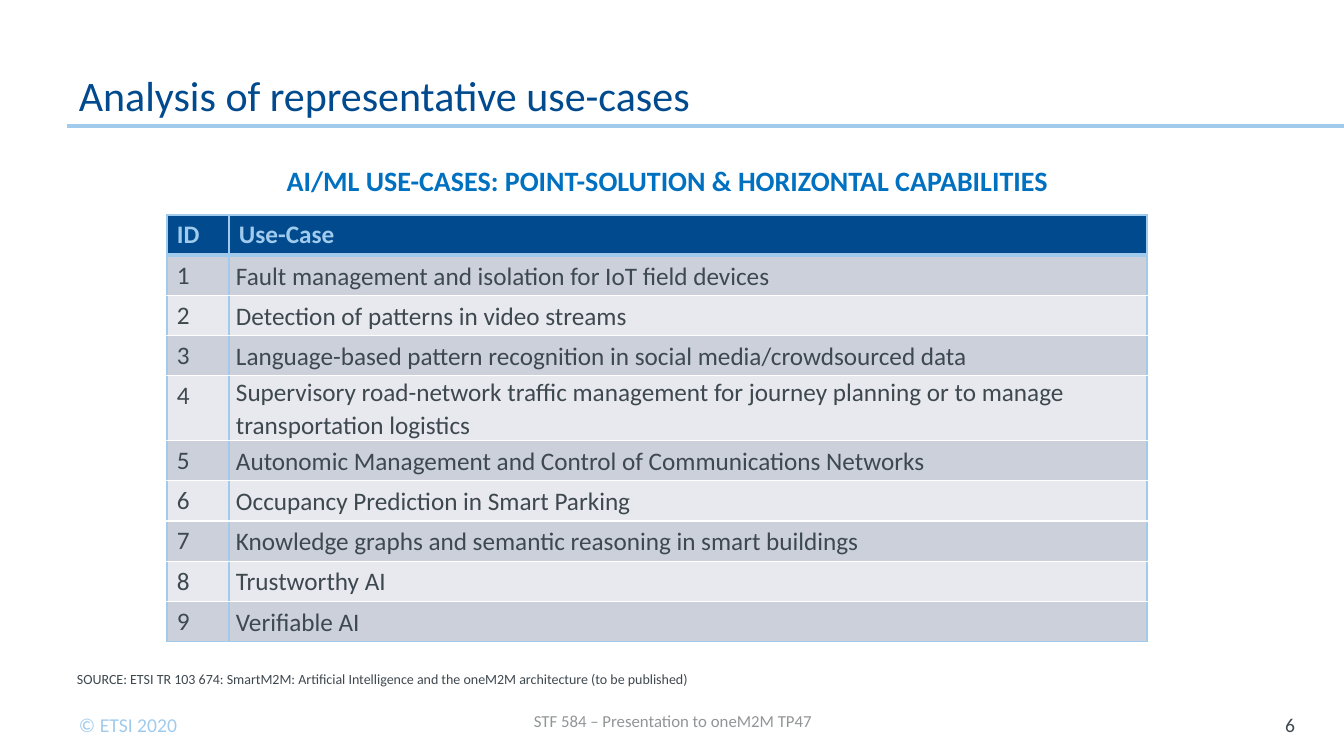
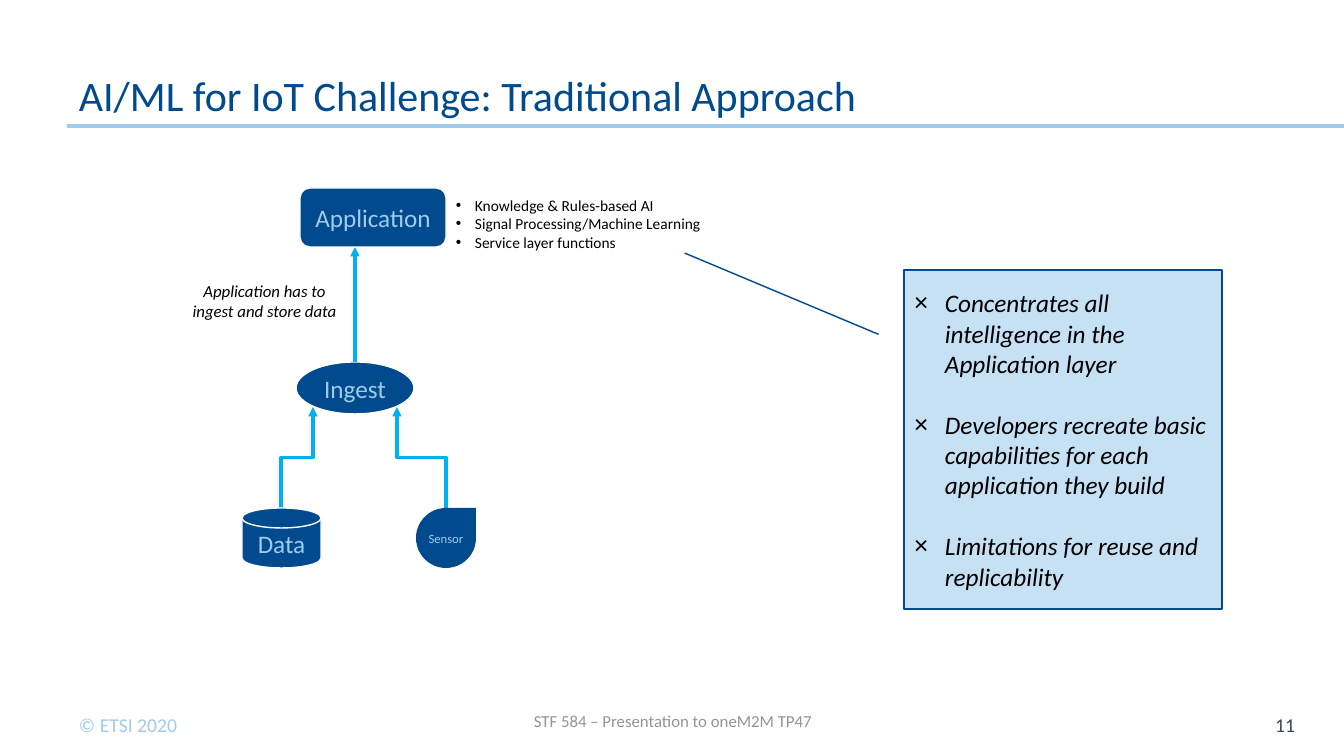
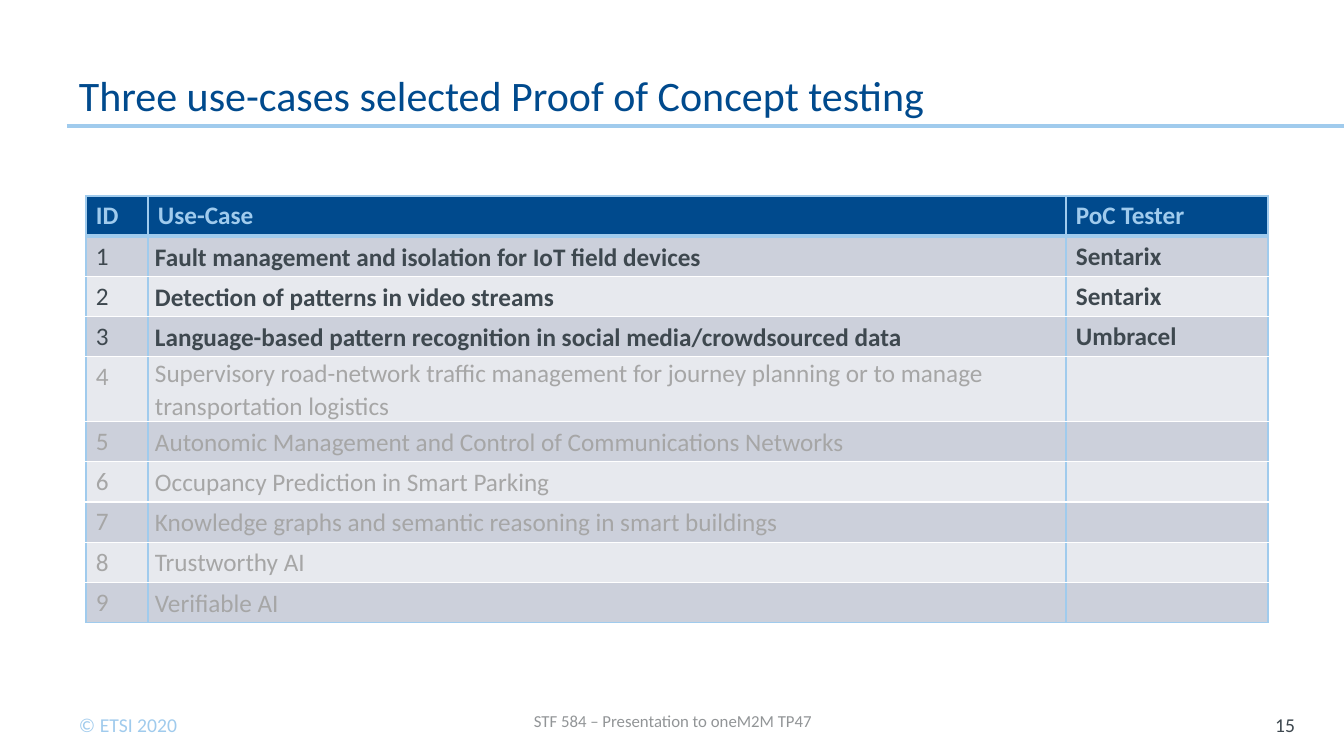
from lxml import etree
from pptx import Presentation
from pptx.dml.color import RGBColor
from pptx.enum.shapes import MSO_CONNECTOR, MSO_SHAPE
from pptx.enum.text import MSO_ANCHOR, PP_ALIGN
from pptx.oxml.ns import qn
from pptx.util import Emu, Pt

STRAIGHT, ELBOW = MSO_CONNECTOR.STRAIGHT, MSO_CONNECTOR.ELBOW
ELLIPSE, ROUNDED = MSO_SHAPE.OVAL, MSO_SHAPE.ROUNDED_RECTANGLE
DISK, TEAR = MSO_SHAPE.FLOWCHART_MAGNETIC_DISK, MSO_SHAPE.TEAR
CALLOUT = MSO_SHAPE.LINE_CALLOUT_1
LEFT, CENTER, RIGHT = PP_ALIGN.LEFT, PP_ALIGN.CENTER, PP_ALIGN.RIGHT
TOP, MIDDLE, BOTTOM = MSO_ANCHOR.TOP, MSO_ANCHOR.MIDDLE, MSO_ANCHOR.BOTTOM

FONT = "Calibri"
COLORS = {
    "navy": "004A8D", "sky": "A0CBED", "text": "3E484F", "footer": "929597",
    "heading": "0070C0", "arrow": "00B0F0", "panel": "C6E0F4", "muted": "A6A6A6",
    "odd_row": "CCD0DB", "even_row": "E7E9EE", "black": "000000", "white": "FFFFFF",
}
SLIDE_WIDTH, SLIDE_HEIGHT = 1344, 756
PX_PER_INCH = 100.8
INSETS = (10, 5, 10, 5)
CASE_INSETS = (7, 0, 7, 0)
ROW_HEIGHT = 40
ID_WIDTH, CASE_WIDTH, TESTER_WIDTH = 62, 918, 202

USE_CASES = [
    "Fault management and isolation for IoT field devices",
    "Detection of patterns in video streams",
    "Language-based pattern recognition in social media/crowdsourced data",
    "Supervisory road-network traffic management for journey planning or to manage "
    "transportation logistics",
    "Autonomic Management and Control of Communications Networks",
    "Occupancy Prediction in Smart Parking",
    "Knowledge graphs and semantic reasoning in smart buildings",
    "Trustworthy AI",
    "Verifiable AI",
]
TESTERS = ["Sentarix", "Sentarix", "Umbracel"]


def px(length):
    return Emu(round(length * 914400 / PX_PER_INCH))


def rgb(name):
    return RGBColor.from_string(COLORS[name])


# Text
def write(paragraph, text, size, color, bold=False, italic=False, align=LEFT):
    paragraph.text = text
    paragraph.alignment = align
    for run in paragraph.runs:
        font = run.font
        font.name, font.size = FONT, Pt(size)
        font.bold, font.italic = bold, italic
        font.color.rgb = rgb(color)


def set_indent(paragraph, left, first=0, bullet=None):
    properties = paragraph._p.get_or_add_pPr()
    properties.set("marL", str(px(left)))
    properties.set("indent", str(px(first)))
    if bullet:
        etree.SubElement(properties, qn("a:buFont")).set("typeface", "Arial")
        etree.SubElement(properties, qn("a:buChar")).set("char", bullet)


def write_bullets(text_frame, items, size, bullet, indent, gap=0, italic=False):
    for index, item in enumerate(items):
        paragraph = text_frame.add_paragraph() if index else text_frame.paragraphs[0]
        set_indent(paragraph, indent, -indent, bullet)
        write(paragraph, item, size, "black", italic=italic)
        if index and gap:
            paragraph.space_before = Pt(gap)


def set_frame(frame, anchor, insets):
    """Works for text frames, and for table cells, which carry the same margins."""
    frame.vertical_anchor = anchor
    (frame.margin_left, frame.margin_top,
     frame.margin_right, frame.margin_bottom) = map(px, insets)


def add_box(slide, box, anchor=TOP, insets=INSETS, wrap=True):
    text_frame = slide.shapes.add_textbox(*map(px, box)).text_frame
    text_frame.word_wrap = wrap
    set_frame(text_frame, anchor, insets)
    return text_frame


def add_text(slide, box, text, size, color, anchor=TOP, insets=INSETS, **style):
    paragraph = add_box(slide, box, anchor, insets).paragraphs[0]
    write(paragraph, text, size, color, **style)
    return paragraph


# Shapes and lines
def add_shape(slide, kind, box, fill="navy", line="white", insets=INSETS):
    shape = slide.shapes.add_shape(kind, *map(px, box))
    shape.shadow.inherit = False
    shape.fill.solid()
    shape.fill.fore_color.rgb = rgb(fill)
    if line:
        shape.line.color.rgb = rgb(line)
        shape.line.width = Pt(1)
    else:
        shape.line.fill.background()
    shape.text_frame.word_wrap = True
    set_frame(shape.text_frame, MIDDLE, insets)
    return shape


def add_node(slide, kind, box, label, size=18, **look):
    shape = add_shape(slide, kind, box, **look)
    write(shape.text_frame.paragraphs[0], label, size, "sky", align=CENTER)
    return shape


def add_line(slide, kind, begin, end, color, arrow=False):
    connector = slide.shapes.add_connector(kind, *map(px, begin + end))
    connector.line.color.rgb = rgb(color)
    connector.line.width = Pt(2.25)
    if arrow:
        tail = etree.SubElement(connector.line._get_or_add_ln(), qn("a:tailEnd"))
        tail.set("type", "triangle")
    etree.SubElement(connector._element.spPr, qn("a:effectLst"))
    return connector


def add_rising_elbow(slide, begin, end):
    """Arrow that leaves upwards, steps sideways halfway and ends upwards."""
    (x1, y1), (x2, y2) = begin, end
    length, span = y1 - y2, abs(x2 - x1)
    left, top = (x1 + x2 - length) / 2, (y1 + y2 - span) / 2
    connector = add_line(slide, ELBOW, (left, top), (left + length, top + span),
                         "arrow", arrow=True)
    transform = connector._element.spPr.find(qn("a:xfrm"))
    transform.set("rot", str((270 if x2 < x1 else 90) * 60000))
    transform.set("flipV", "1")
    if x2 > x1:
        transform.set("flipH", "1")


# Tables
def set_cell(cell, fill, borders):
    properties = cell._tc.get_or_add_tcPr()
    for side, width in borders.items():
        border = etree.SubElement(properties, qn("a:ln" + side), w=str(Pt(width)))
        solid = etree.SubElement(border, qn("a:solidFill"))
        etree.SubElement(solid, qn("a:srgbClr")).set("val", COLORS["sky"])
    cell.fill.solid()
    cell.fill.fore_color.rgb = rgb(fill)


def add_use_case_table(slide, left, top, testers=None):
    headers, widths = ["ID", "Use-Case"], [ID_WIDTH, CASE_WIDTH]
    if testers:
        headers.append("PoC Tester")
        widths.append(TESTER_WIDTH)
    row_count = len(USE_CASES) + 1
    table = slide.shapes.add_table(
        row_count, len(headers), px(left), px(top),
        px(sum(widths)), px(ROW_HEIGHT * row_count)).table
    table.horz_banding = False
    for column, width in zip(table.columns, widths):
        column.width = px(width)
    for row in table.rows:
        row.height = px(ROW_HEIGHT)

    for column, header in enumerate(headers):
        cell = table.cell(0, column)
        set_cell(cell, "navy", {"L": 1, "R": 1, "T": 1, "B": 3})
        set_frame(cell, TOP, INSETS)
        write(cell.text_frame.paragraphs[0], header, 18, "sky", bold=True)

    for number, use_case in enumerate(USE_CASES, start=1):
        selected = bool(testers) and number <= len(testers)
        color = "muted" if testers and not selected else "text"
        values = [str(number), use_case]
        if testers:
            values.append(testers[number - 1] if selected else "")
        for column, value in enumerate(values):
            cell = table.cell(number, column)
            set_cell(cell, "odd_row" if number % 2 else "even_row",
                     {"L": 1, "R": 1, "B": 1})
            is_case = column == 1
            set_frame(cell, MIDDLE if is_case else TOP,
                      CASE_INSETS if is_case else INSETS)
            paragraph = cell.text_frame.paragraphs[0]
            write(paragraph, value, 18, color, bold=selected and column > 0)
            if is_case:
                paragraph.line_spacing = 1.07
                paragraph.space_after = Pt(8)


# Parts shared by all slides
def add_slide(presentation, title, page):
    slide = presentation.slides.add_slide(presentation.slide_layouts[6])
    add_text(slide, (69, 708, 135, 34), "© ETSI 2020", 14, "sky")
    add_text(slide, (1235, 705, 70, 40), str(page), 14, "text",
             MIDDLE, (0, 5, 10, 5), align=RIGHT)
    add_line(slide, STRAIGHT, (67, 126), (SLIDE_WIDTH, 126), "sky")
    heading = add_text(slide, (67, 30, 1050, 96), title, 30, "navy",
                       BOTTOM, (12, 6, 12, 6))
    heading.line_spacing = Pt(30)
    add_text(slide, (446, 701, 454, 40), "STF 584 – Presentation to oneM2M TP47",
             12, "footer", MIDDLE, align=CENTER)
    return slide


# Slides
def build_analysis(presentation):
    slide = add_slide(presentation, "Analysis of representative use-cases", 6)
    add_use_case_table(slide, 167, 215)
    add_text(slide, (67, 666, 673, 27),
             "SOURCE: ETSI TR 103 674: SmartM2M: Artificial Intelligence and the "
             "oneM2M architecture (to be published)", 10, "text")
    subtitle = add_text(slide, (109, 158, 1067, 44),
                        "AI/ML USE-CASES: POINT-SOLUTION & HORIZONTAL CAPABILITIES",
                        20, "heading", bold=True, align=CENTER)
    set_indent(subtitle, 50)


def build_traditional_approach(presentation):
    slide = add_slide(presentation, "AI/ML for IoT Challenge: Traditional Approach", 11)

    # Data flow
    ingest = add_node(slide, ELLIPSE, (296, 362, 118, 52), "Ingest")
    to_application = add_line(slide, STRAIGHT, (355, 362), (355, 247), "arrow", arrow=True)
    to_application.begin_connect(ingest, 0)
    add_rising_elbow(slide, (446, 508), (397, 407))
    add_rising_elbow(slide, (281, 508), (313, 407))
    add_node(slide, DISK, (242, 508, 79, 60), "Data")
    add_node(slide, ROUNDED, (300, 188, 146, 59), "Application")
    add_node(slide, TEAR, (416, 508, 60, 60), "Sensor", 9, line=None, insets=(0, 5, 0, 5))

    # Notes beside the flow
    functions = add_box(slide, (446, 191, 265, 67), wrap=False)
    write_bullets(functions, ["Knowledge & Rules-based AI",
                              "Signal Processing/Machine Learning",
                              "Service layer functions"], 11, "•", 19)
    add_text(slide, (175, 276, 179, 50), "Application has to ingest and store data",
             12, "black", italic=True, align=CENTER)

    # Drawbacks
    callout = add_shape(slide, CALLOUT, (904, 270, 318, 339), "panel", "navy")
    for index, value in enumerate((0.19, -0.08, -0.05, -0.69)):
        callout.adjustments[index] = value
    write_bullets(callout.text_frame,
                  ["Concentrates all intelligence in the Application layer",
                   "Developers recreate basic capabilities for each application they build",
                   "Limitations for reuse and replicability"],
                  18, "×", 31, gap=22, italic=True)


def build_selection(presentation):
    slide = add_slide(presentation, "Three use-cases selected Proof of Concept testing", 15)
    add_use_case_table(slide, 86, 196, TESTERS)


def main():
    presentation = Presentation()
    presentation.slide_width = px(SLIDE_WIDTH)
    presentation.slide_height = px(SLIDE_HEIGHT)
    build_analysis(presentation)
    build_traditional_approach(presentation)
    build_selection(presentation)
    presentation.save("out.pptx")


if __name__ == "__main__":
    main()
